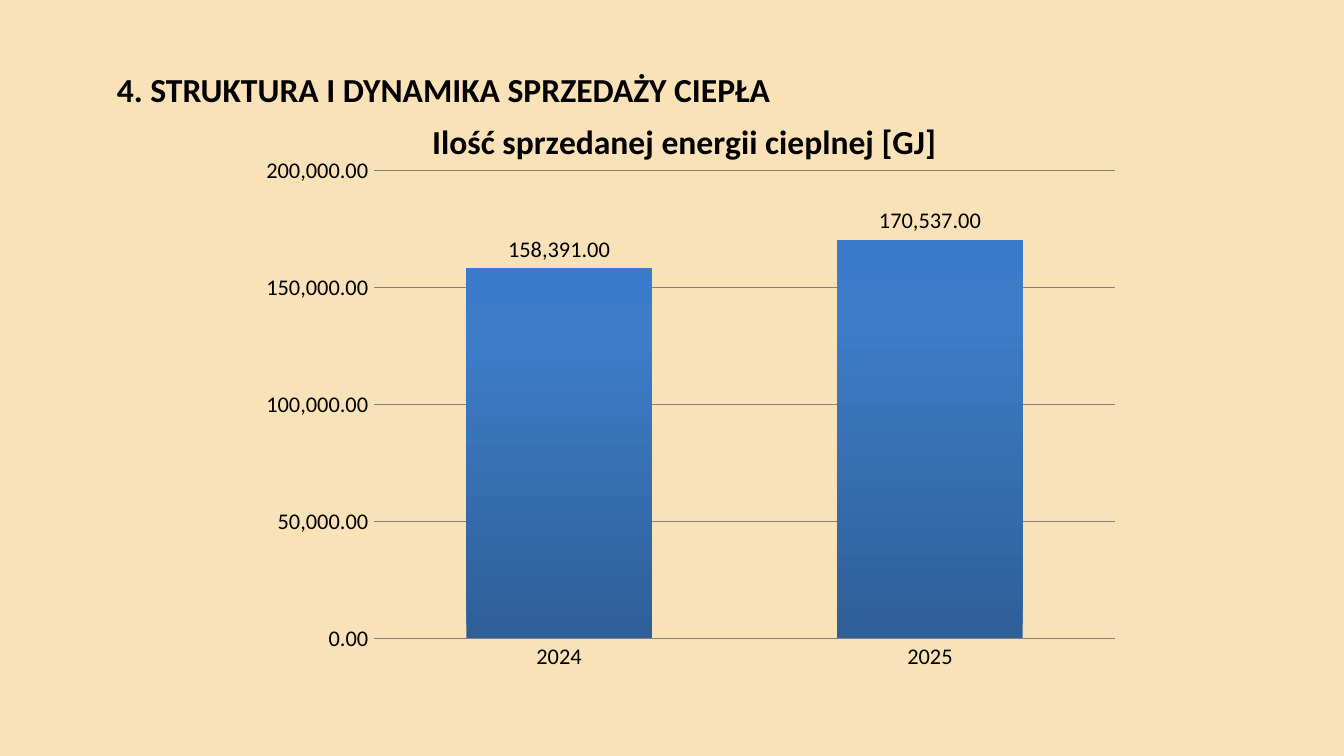
import copy

import pptx
import pptx.chart.data
import pptx.dml.color
import pptx.enum.chart
import pptx.enum.text
import pptx.oxml
import pptx.oxml.ns
import pptx.util

BACKGROUND = pptx.dml.color.RGBColor(0xFA, 0xE2, 0xB8)
BLACK = pptx.dml.color.RGBColor(0x00, 0x00, 0x00)
GRAY = pptx.dml.color.RGBColor(0x80, 0x80, 0x80)
BAR_GRADIENT = [
    (0, pptx.dml.color.RGBColor(0x2F, 0x5F, 0x99)),
    (0.8, pptx.dml.color.RGBColor(0x3D, 0x7C, 0xC7)),
    (1, pptx.dml.color.RGBColor(0x3A, 0x7C, 0xCB)),
]
FONT = "Calibri"
NUMBER_FORMAT = "#,##0.00"
Inches = pptx.util.Inches


def style_font(font, size, bold=False):
    font.name = FONT
    font.size = pptx.util.Pt(size)
    font.bold = bold
    font.color.rgb = BLACK


def style_line(line):
    line.color.rgb = GRAY
    line.width = pptx.util.Pt(0.75)


def place_layout(parent, index, **settings):
    """Give a chart part a manual layout, with its settings in schema order."""
    for default in parent.xpath("c:layout"):
        parent.remove(default)
    items = "".join(f'<c:{name} val="{value}"/>' for name, value in settings.items())
    namespace = pptx.oxml.ns.nsdecls("c")
    parent.insert(index, pptx.oxml.parse_xml(
        f"<c:layout {namespace}><c:manualLayout>{items}</c:manualLayout></c:layout>"
    ))


def add_heading(slide, left, top, width, height):
    heading = slide.shapes.add_textbox(left, top, width, height).text_frame
    heading.word_wrap = True
    heading.vertical_anchor = pptx.enum.text.MSO_ANCHOR.TOP
    heading.margin_left = heading.margin_right = Inches(0.09)
    heading.margin_top = heading.margin_bottom = Inches(0.04)
    heading.text = "4. STRUKTURA I DYNAMIKA SPRZEDAŻY CIEPŁA"
    style_font(heading.paragraphs[0].runs[0].font, 18, bold=True)


def fill_bars(series):
    fill = series.format.fill
    fill.gradient()
    fill.gradient_angle = 90
    stop_list = series._element.xpath(".//a:gsLst")[0]
    stop_list.append(copy.deepcopy(stop_list[-1]))
    for stop, (position, color) in zip(fill.gradient_stops, BAR_GRADIENT):
        stop.position = position
        stop.color.rgb = color


def style_axes(chart):
    years, energy = chart.category_axis, chart.value_axis
    for axis in (years, energy):
        axis.major_tick_mark = pptx.enum.chart.XL_TICK_MARK.NONE
        axis.minor_tick_mark = pptx.enum.chart.XL_TICK_MARK.NONE
        style_font(axis.tick_labels.font, 12)
    style_line(years.format.line)
    energy.format.line.fill.background()
    energy.minimum_scale = 0
    energy.maximum_scale = 200000
    energy.major_unit = 50000
    energy.has_major_gridlines = True
    style_line(energy.major_gridlines.format.line)
    energy.tick_labels.number_format = NUMBER_FORMAT
    energy.tick_labels.number_format_is_linked = False


def add_sales_chart(slide, left, top, width, height):
    sales = pptx.chart.data.CategoryChartData(number_format=NUMBER_FORMAT)
    sales.categories = ["2024", "2025"]
    sales.add_series("Series 1", (158391, 170537))
    chart = slide.shapes.add_chart(
        pptx.enum.chart.XL_CHART_TYPE.COLUMN_CLUSTERED, left, top, width, height, sales
    ).chart
    style_font(chart.font, 10)
    chart.has_legend = False

    chart.has_title = True
    caption = chart.chart_title.text_frame
    caption.text = "Ilość sprzedanej energii cieplnej [GJ]"
    style_font(caption.paragraphs[0].runs[0].font, 18, bold=True)
    place_layout(chart.chart_title._element, 1, xMode="edge", yMode="edge", x=0.21, y=0.03)
    place_layout(
        chart._chartSpace.xpath("c:chart/c:plotArea")[0], 0,
        layoutTarget="inner", xMode="edge", yMode="edge",
        x=Inches(1.01) / width, y=Inches(0.57) / height,
        w=Inches(5.52) / width, h=Inches(3.48) / height,
    )

    style_axes(chart)
    plot = chart.plots[0]
    plot.vary_by_categories = False
    plot.gap_width = 100
    plot.overlap = -24
    fill_bars(plot.series[0])
    labels = plot.series[0].data_labels
    labels.show_value = True
    labels.position = pptx.enum.chart.XL_LABEL_POSITION.OUTSIDE_END
    labels.number_format = NUMBER_FORMAT
    labels.number_format_is_linked = False
    style_font(labels.font, 12)


def main():
    presentation = pptx.Presentation()
    presentation.slide_width = Inches(10)
    presentation.slide_height = presentation.slide_width * 9 // 16
    slide = presentation.slides.add_slide(presentation.slide_layouts[6])
    slide.background.fill.solid()
    slide.background.fill.fore_color.rgb = BACKGROUND
    add_heading(slide, Inches(0.78), Inches(0.47), Inches(8.5), Inches(0.47))
    add_sales_chart(slide, Inches(1.77), Inches(0.7), Inches(6.67), Inches(4.44))
    presentation.save("out.pptx")


if __name__ == "__main__":
    main()
